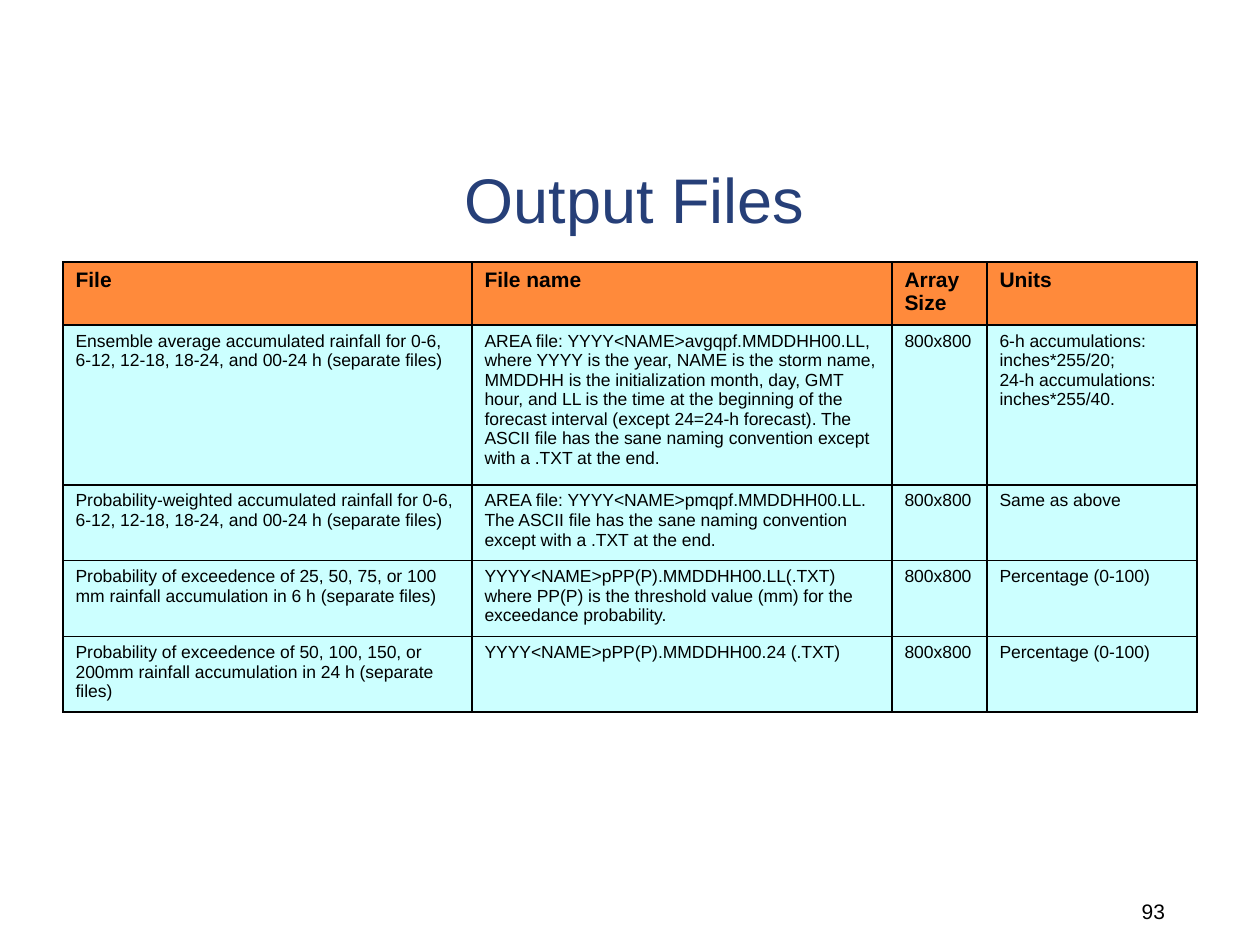
import pptx
import pptx.util
import pptx.dml.color
import pptx.enum.text
import pptx.oxml.ns
import lxml.etree
from dataclasses import dataclass


@dataclass(frozen=True)
class Theme:
    font: str = "Arial"
    navy: str = "263F78"
    black: str = "000000"
    orange: str = "FF8A3B"
    cyan: str = "CCFFFF"
    title: int = 36
    head: int = 12
    body: int = 10
    line: int = 1


theme = Theme()
PX = 914400 // 126
align = pptx.enum.text.PP_ALIGN
bottom = pptx.enum.text.MSO_ANCHOR.BOTTOM
qn = pptx.oxml.ns.qn


def write(frame, text, size, color, bold=False, side=align.LEFT):
    frame.word_wrap = True
    frame.text = text
    for para in frame.paragraphs:
        para.alignment = side
        font = para.font
        font.name = theme.font
        font.size = pptx.util.Pt(size)
        font.bold = bold
        font.color.rgb = pptx.dml.color.RGBColor.from_string(color)


def border(cell):
    """Draw a thin line on all four sides, placed before the cell fill."""
    props = cell._tc.get_or_add_tcPr()
    for spot, tag in enumerate(("a:lnL", "a:lnR", "a:lnT", "a:lnB")):
        line = lxml.etree.Element(qn(tag), w=str(pptx.util.Pt(theme.line)))
        fill = lxml.etree.SubElement(line, qn("a:solidFill"))
        lxml.etree.SubElement(fill, qn("a:srgbClr"), val=theme.black)
        props.insert(spot, line)


deck = pptx.Presentation()
deck.slide_width = pptx.util.Inches(10)
deck.slide_height = pptx.util.Inches(7.5)
slide = deck.slides.add_slide(deck.slide_layouts[6])

# Title and page number
labels = [
    ("Output Files", (94, 53, 1081, 189), 6, theme.title, theme.navy, align.CENTER),
    ("93", (903, 861, 262, 63), 0, theme.head, theme.black, align.RIGHT),
]
for text, place, pad, size, color, side in labels:
    box = slide.shapes.add_textbox(*(n * PX for n in place))
    frame = box.text_frame
    frame.margin_left = frame.margin_right = 0
    frame.margin_top = frame.margin_bottom = pad * PX
    frame.vertical_anchor = bottom
    write(frame, text, size, color, side=side)

# Table of files
rows = [
    ("File", "File name", "Array Size", "Units"),
    (
        "Ensemble average accumulated rainfall for 0-6, 6-12, 12-18, 18-24, "
        "and 00-24 h (separate files)",
        "AREA file: YYYY<NAME>avgqpf.MMDDHH00.LL, where YYYY is the year, "
        "NAME is the storm name, MMDDHH is the initialization month, day, GMT "
        "hour, and LL is the time at the beginning of the forecast interval "
        "(except 24=24-h forecast). The ASCII file has the sane naming "
        "convention except with a .TXT at the end.",
        "800x800",
        "6-h accumulations: inches*255/20;\n24-h accumulations: inches*255/40.",
    ),
    (
        "Probability-weighted accumulated rainfall for 0-6, 6-12, 12-18, 18-24, "
        "and 00-24 h (separate files)",
        "AREA file: YYYY<NAME>pmqpf.MMDDHH00.LL. The ASCII file has the sane "
        "naming convention except with a .TXT at the end.",
        "800x800",
        "Same as above",
    ),
    (
        "Probability of exceedence of 25, 50, 75, or 100 mm rainfall "
        "accumulation in 6 h (separate files)",
        "YYYY<NAME>pPP(P).MMDDHH00.LL(.TXT) where PP(P) is the threshold value "
        "(mm) for the exceedance probability.",
        "800x800",
        "Percentage (0-100)",
    ),
    (
        "Probability of exceedence of 50, 100, 150, or 200mm rainfall "
        "accumulation in 24 h (separate files)",
        "YYYY<NAME>pPP(P).MMDDHH00.24 (.TXT)",
        "800x800",
        "Percentage (0-100)",
    ),
]
widths = (409, 420, 95, 210)
heights = (59, 149, 72, 71, 71)

table = slide.shapes.add_table(
    len(rows), len(widths), 63 * PX, 262 * PX, sum(widths) * PX, sum(heights) * PX
).table
for col, width in zip(table.columns, widths):
    col.width = width * PX
for row, height in zip(table.rows, heights):
    row.height = height * PX

for r, texts in enumerate(rows):
    top = r == 0
    for c, text in enumerate(texts):
        cell = table.cell(r, c)
        size = theme.head if top else theme.body
        write(cell.text_frame, text, size, theme.black, bold=top)
        cell.fill.solid()
        fill = theme.orange if top else theme.cyan
        cell.fill.fore_color.rgb = pptx.dml.color.RGBColor.from_string(fill)
        border(cell)

deck.save("out.pptx")
